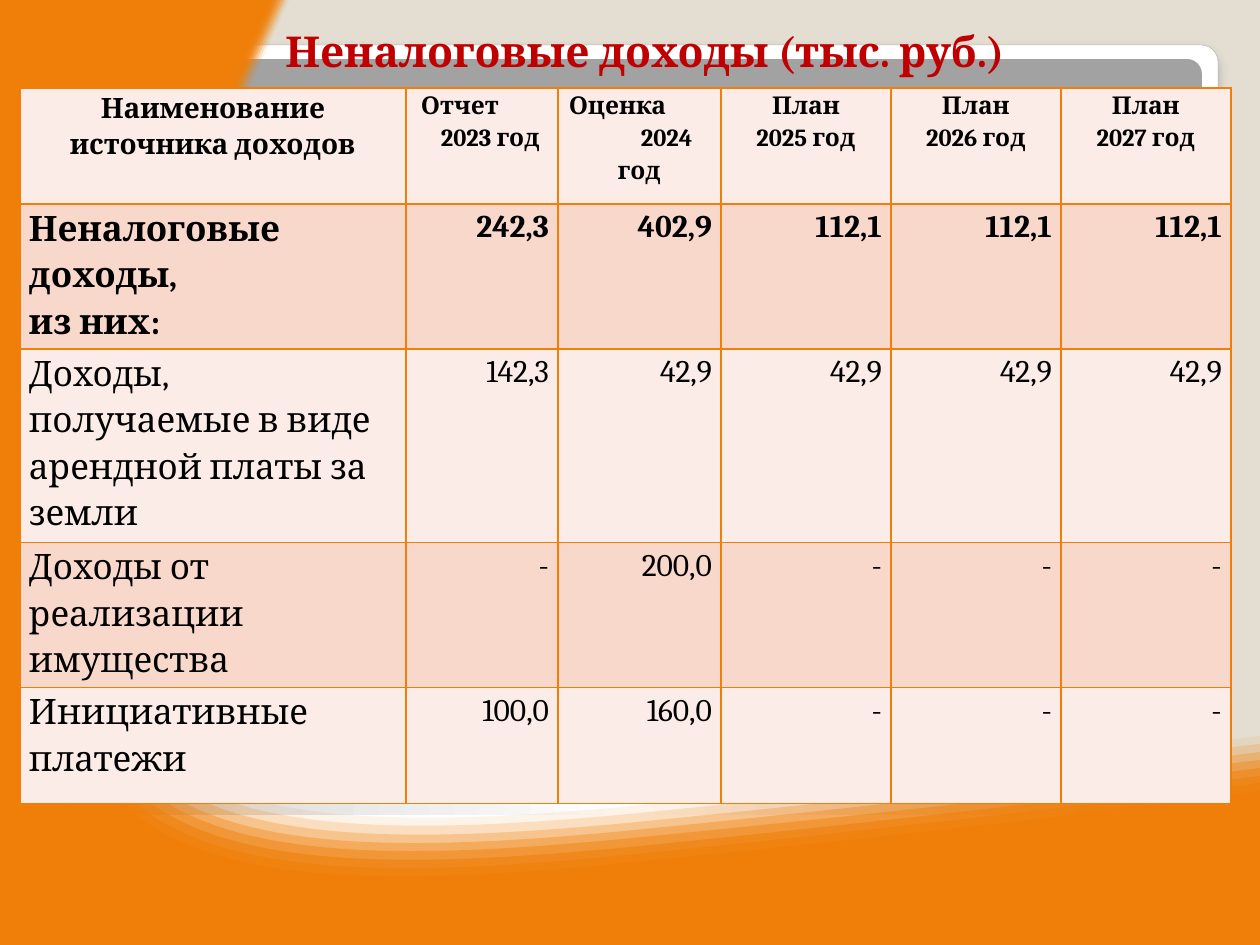
from lxml import etree
from pptx import Presentation
from pptx import util as u
from pptx.dml.color import RGBColor
from pptx.enum import shapes, text
from pptx.oxml import ns

PX = 914400 / 126
FONT = "Cambria"
BEIGE = RGBColor(0xE3, 0xDE, 0xD1)
ORANGE = RGBColor(0xF0, 0x7F, 0x09)
RED = RGBColor(0xC0, 0x00, 0x00)
BLACK = RGBColor(0, 0, 0)
GREY = RGBColor(0xA4, 0xA4, 0xA4)
PALE = RGBColor(0xFC, 0xEC, 0xE7)
PINK = RGBColor(0xF9, 0xD8, 0xCC)

# Bezier edges from the top of the slide to its right side
EDGE = [(251, 0), (251, 0), (227, 52), (185, 145), (-152, 897), (101, 951),
        (619, 900), (1016, 859), (1260, 827), (1260, 827)]
FAR = [(289, 0), (289, 1), (266, 50), (227, 137), (-69, 796), (152, 854),
       (653, 804), (1026, 767), (1257, 736), (1260, 736)]
NEAR = [(262, 0), (256, 14), (234, 66), (199, 144), (-135, 886), (116, 939),
        (627, 887), (990, 851), (1227, 820), (1260, 815)]
BANDS = 11

COLS = [386, 152, 163, 170, 170, 170]
ROWS = [116, 116, 174, 116, 116]
# A header line is its text and its left indent; None centres it
HEAD = [
    [("Наименование источника доходов", None)],
    [("Отчет", 6), ("2023 год", 26)],
    [("Оценка", 2), ("2024", 74), ("год", 51)],
    *([("План", None), (f"{year} год", None)] for year in (2025, 2026, 2027)),
]
BODY = [
    ("Неналоговые доходы,\nиз них:", "242,3", "402,9", "112,1", "112,1", "112,1"),
    ("Доходы, получаемые в виде арендной платы за земли",
     "142,3", "42,9", "42,9", "42,9", "42,9"),
    ("Доходы от реализации имущества", "-", "200,0", "-", "-", "-"),
    ("Инициативные платежи", "100,0", "160,0", "-", "-", "-"),
]


def px(n):
    return u.Emu(round(n * PX))


def sub(node, tag, **attrs):
    return etree.SubElement(node, ns.qn(tag), {k: str(v) for k, v in attrs.items()})


def tint(node, color, alpha=100):
    clr = sub(node, "a:srgbClr", val=color)
    if alpha < 100:
        sub(clr, "a:alpha", val=round(alpha * 1000))


def shade(effects, alpha, blur, dist):
    """Add a downward shadow to an effect list."""
    drop = sub(effects, "a:outerShdw", blurRad=u.Pt(blur), dist=u.Pt(dist),
               dir=5400000, algn="t", rotWithShape=0)
    tint(drop, BLACK, alpha)


def style(para, size, color=BLACK, bold=False, align=None):
    para.alignment = align
    for run in para.runs:
        font = run.font
        font.name, font.size, font.bold = FONT, u.Pt(size), bold
        font.color.rgb = color


def panel(slide, box, stops):
    """Add a rounded panel; return it with its gradient element."""
    form = slide.shapes.add_shape(shapes.MSO_SHAPE.ROUNDED_RECTANGLE, *map(px, box))
    form.adjustments[0] = 0.02
    form.shadow.inherit = False
    form.line.fill.background()
    form.fill.gradient()
    grad = form._element.spPr.find(ns.qn("a:gradFill"))
    for child in list(grad):
        grad.remove(child)
    marks = sub(grad, "a:gsLst")
    for pos, color in stops:
        tint(sub(marks, "a:gs", pos=pos * 1000), color)
    return form, grad


def frame(slide, box):
    """Draw the white frame and the grey panel inside it."""
    left, top, wide, high = box
    outer, grad = panel(slide, box, [(0, "FFFFFF"), (98, "FFFFFF"),
                                     (99, "F7F7F7"), (100, "DADADA")])
    sub(grad, "a:lin", ang=5400000, scaled=0)
    outer.line.color.rgb = GREY
    outer.line.width = u.Pt(0.16)
    shade(outer._element.spPr.find(ns.qn("a:effectLst")), 25, 6, 4)
    inner = (left + 16, top + 14, wide - 32, high - 98)
    _, grad = panel(slide, inner, [(0, "FFFFFF"), (55, "E1E1E1"), (100, "A2A2A2")])
    way = sub(grad, "a:path", path="circle")
    sub(way, "a:fillToRect", l=50000, t=175000, r=50000, b=-75000)


def patch(slide, box, chains, alpha=100):
    """Fill the outline made of Bezier chains joined by straight lines."""
    left, top, wide, high = box
    pen = slide.shapes.build_freeform(0, 0, scale=PX)
    pen.add_line_segments([(wide, 0), (wide, high), (0, high)])
    form = pen.convert_to_shape(px(left), px(top))
    form.shadow.inherit = False
    form.line.fill.background()
    form.fill.solid()
    form.fill.fore_color.rgb = ORANGE
    if alpha < 100:
        clr = form._element.spPr.find(".//" + ns.qn("a:srgbClr"))
        sub(clr, "a:alpha", val=round(alpha * 1000))

    trace = form._element.spPr.find(".//" + ns.qn("a:path"))
    for child in list(trace):
        trace.remove(child)

    def leg(tag, dots):
        node = sub(trace, tag)
        for x, y in dots:
            sub(node, "a:pt", x=round(x), y=round(y))

    for n, chain in enumerate(chains):
        leg("a:lnTo" if n else "a:moveTo", chain[:1])
        for i in range(1, len(chain), 3):
            leg("a:cubicBezTo", chain[i:i + 3])
    sub(trace, "a:close")


def swoosh(slide, box):
    """Draw the orange corner and the bands that fade out from it."""
    wide, high = box[2:]
    patch(slide, box, [EDGE, [(wide, high)], [(0, high)], [(0, 0)]])
    for n in range(BANDS):
        t = n / (BANDS - 1)
        rim = [(a + (c - a) * t, b + (d - b) * t)
               for (a, b), (c, d) in zip(FAR, NEAR)]
        patch(slide, box, [rim, EDGE[::-1]], 100 * (n + 1) / BANDS)


def title(slide, box):
    body = slide.shapes.add_textbox(*map(px, box)).text_frame
    body.word_wrap = True
    body.vertical_anchor = text.MSO_ANCHOR.MIDDLE
    body.margin_top, body.margin_bottom = 0, px(12)
    para = body.paragraphs[0]
    para.text = "Неналоговые доходы (тыс. руб.)"
    style(para, 24.3, RED, True, text.PP_ALIGN.CENTER)
    props = para.runs[0]._r.get_or_add_rPr()
    effects = etree.Element(ns.qn("a:effectLst"))
    props.find(ns.qn("a:solidFill")).addnext(effects)
    shade(effects, 50, 4, 3)


def dress(cell, fill):
    """Set the insets, borders and fill of a cell."""
    cell.margin_left = cell.margin_right = px(9)
    cell.margin_top = cell.margin_bottom = 0
    props = cell._tc.get_or_add_tcPr()
    for side in "LRTB":
        line = sub(props, f"a:ln{side}", w=u.Pt(1))
        tint(sub(line, "a:solidFill"), ORANGE)
    cell.fill.solid()
    cell.fill.fore_color.rgb = fill


def table(slide, box):
    grid = slide.shapes.add_table(len(ROWS), len(COLS), *map(px, box)).table
    for col, wide in zip(grid.columns, COLS):
        col.width = px(wide)
    for row, high in zip(grid.rows, ROWS):
        row.height = px(high)
    for c, lines in enumerate(HEAD):
        cell = grid.cell(0, c)
        dress(cell, PALE)
        cell.text_frame.text = "\n".join(word for word, _ in lines)
        for para, (_, dent) in zip(cell.text_frame.paragraphs, lines):
            para.line_spacing = 1.15
            mid = dent is None
            style(para, 14 if c else 16, bold=True,
                  align=text.PP_ALIGN.CENTER if mid else text.PP_ALIGN.LEFT)
            if not mid:
                para._p.get_or_add_pPr().set("marL", str(px(dent)))
    for r, values in enumerate(BODY, 1):
        for c, value in enumerate(values):
            cell = grid.cell(r, c)
            dress(cell, PINK if r % 2 else PALE)
            cell.text_frame.text = value
            for para in cell.text_frame.paragraphs:
                para.line_spacing = 1.15
                style(para, 18 if c else 20, bold=r == 1,
                      align=text.PP_ALIGN.RIGHT if c else text.PP_ALIGN.LEFT)


def main():
    deck = Presentation()
    deck.slide_width, deck.slide_height = px(1260), px(945)
    slide = deck.slides.add_slide(deck.slide_layouts[6])
    slide.background.fill.solid()
    slide.background.fill.fore_color.rgb = BEIGE
    frame(slide, (42, 45, 1176, 854))
    swoosh(slide, (0, 0, 1260, 945))
    title(slide, (78, 20, 1134, 74))
    table(slide, (20, 88, sum(COLS), sum(ROWS)))
    deck.save("out.pptx")


if __name__ == "__main__":
    main()
